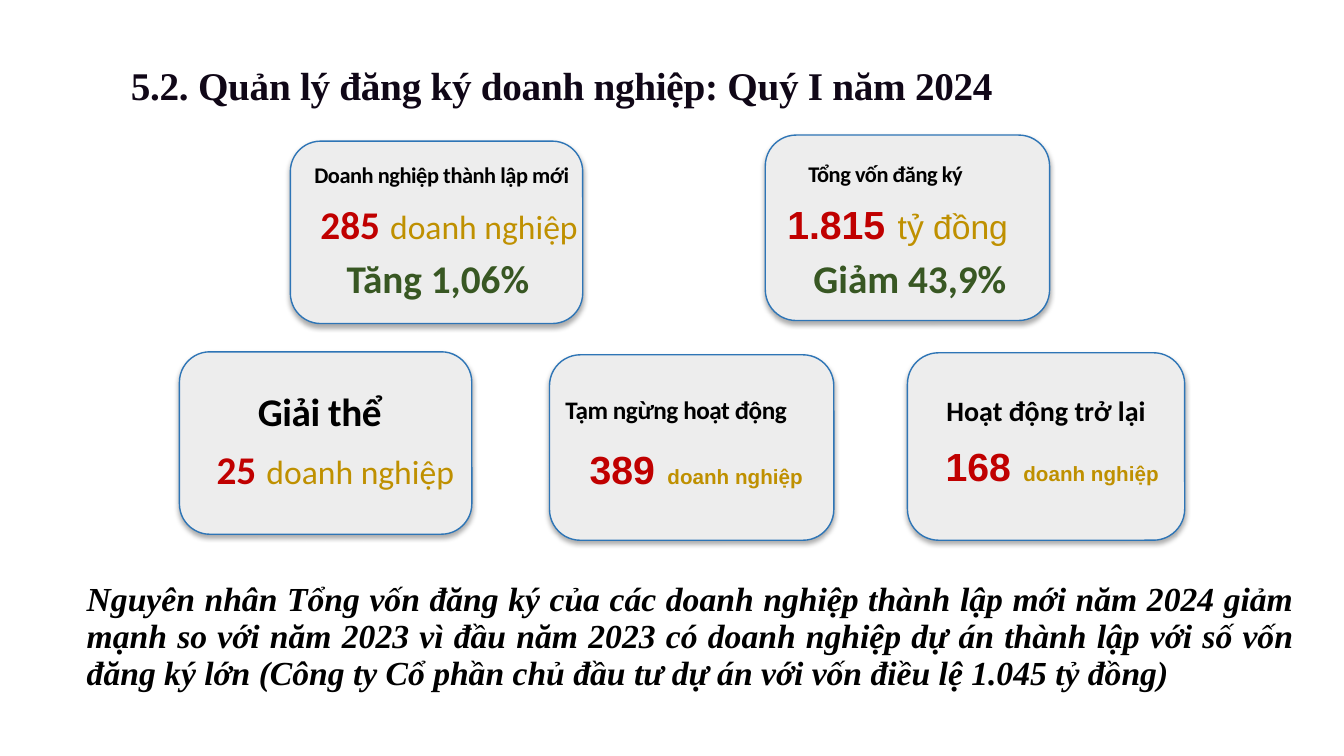
"""Build the business registration slide for the first quarter of 2024."""
from lxml.etree import SubElement
from pptx import Presentation
from pptx.dml.color import RGBColor
from pptx.enum.shapes import MSO_SHAPE
from pptx.enum.text import MSO_ANCHOR, PP_ALIGN
from pptx.oxml.ns import qn
from pptx.util import Inches, Pt

BLACK = RGBColor(0x00, 0x00, 0x00)
INK = RGBColor(0x10, 0x07, 0x17)
RED = RGBColor(0xC0, 0x00, 0x00)
GREEN = RGBColor(0x38, 0x57, 0x23)
GOLD = RGBColor(0xBF, 0x90, 0x00)
PALE = RGBColor(0xED, 0xED, 0xED)
BLUE = RGBColor(0x2E, 0x75, 0xB6)
SERIF = "Times New Roman"

TITLE = "5.2. Quản lý đăng ký doanh nghiệp: Quý I năm 2024"
REASON = (
    "Nguyên nhân Tổng vốn đăng ký của các doanh nghiệp thành lập mới năm 2024 "
    "giảm mạnh so với năm 2023 vì đầu năm 2023 có doanh nghiệp dự án thành lập "
    "với số vốn đăng ký lớn (Công ty Cổ phần chủ đầu tư dự án với vốn điều lệ "
    "1.045 tỷ đồng)"
)
CARDS = [
    {"box": (7.59, 1.34, 2.82, 1.84),
     "label": ("Tổng vốn đăng ký", (7.92, 1.54, 2.05, 0.64), {"size": 16, "spacing": -0.3}),
     "figure": ("1.815", "tỷ đồng", (7.71, 1.88, 2.42, 0.64), "Arial", 24, False),
     "change": ("Giảm 43,9%", (7.97, 2.47, 2.14, 0.57))},
    {"box": (2.88, 1.4, 2.9, 1.81),
     "label": ("Doanh nghiệp thành lập mới", (3.02, 1.55, 2.76, 0.64),
               {"size": 16, "spacing": -0.3}),
     "figure": ("285", "doanh nghiệp", (3.08, 1.88, 2.78, 0.64), "Calibri", 24, False),
     "change": ("Tăng 1,06%", (3.34, 2.47, 2.12, 0.57))},
    {"box": (5.45, 3.52, 2.82, 1.84),
     "label": ("Tạm ngừng hoạt động", (5.51, 3.86, 2.8, 0.67), {"size": 18, "spacing": -0.3}),
     "figure": ("389", "doanh nghiệp", (5.75, 4.31, 2.34, 0.64), "Arial", 14.7, True)},
    {"box": (9, 3.5, 2.75, 1.86),
     "label": ("Hoạt động trở lại", (9.28, 3.85, 2.19, 0.71),
               {"size": 20, "align": PP_ALIGN.CENTER}),
     "figure": ("168", "doanh nghiệp", (9.28, 4.28, 2.34, 0.64), "Arial", 14.7, True)},
    {"box": (1.78, 3.49, 2.9, 1.81),
     "label": ("Giải thể", (2.46, 3.79, 1.65, 0.84), {"size": 28, "spacing": -0.3}),
     "figure": ("25", "doanh nghiệp", (2.05, 4.31, 2.58, 0.64), "Calibri", 24, False)},
]


def inches(box):
    return [Inches(length) for length in box]


def write(paragraph, text, *, size, font="Calibri", color=BLACK, bold=True,
          italic=False, spacing=0, align=PP_ALIGN.LEFT):
    paragraph.alignment = align
    run = paragraph.add_run()
    run.text = text
    run.font.name = font
    run.font.size = Pt(size)
    run.font.bold = bold
    run.font.italic = italic
    run.font.color.rgb = color
    if spacing:
        run.font._element.set("spc", str(round(spacing * 100)))


def add_line(slide, box):
    frame = slide.shapes.add_textbox(*inches(box)).text_frame
    frame.word_wrap = True
    return frame.paragraphs[0]


def add_panel(slide, box):
    panel = slide.shapes.add_shape(MSO_SHAPE.ROUNDED_RECTANGLE, *inches(box))
    panel.fill.solid()
    panel.fill.fore_color.rgb = PALE
    panel.line.color.rgb = BLUE
    panel.line.width = Pt(1)
    panel.shadow.inherit = False
    effects = panel._element.spPr.find(qn("a:effectLst"))
    shadow = SubElement(effects, qn("a:outerShdw"), blurRad=str(Pt(3.5)),
                        dist=str(Pt(2.2)), dir="5400000", rotWithShape="0")
    tint = SubElement(shadow, qn("a:srgbClr"), val=str(BLACK))
    SubElement(tint, qn("a:alpha"), val="32000")


def add_card(slide, card):
    add_panel(slide, card["box"])
    label, label_box, label_format = card["label"]
    write(add_line(slide, label_box), label, **label_format)
    number, unit, figure_box, font, unit_size, unit_bold = card["figure"]
    figure = add_line(slide, figure_box)
    write(figure, number, size=28, font=font, color=RED)
    write(figure, " ", size=32, font=font, color=GREEN)
    write(figure, unit, size=unit_size, font=font, color=GOLD, bold=unit_bold)
    if "change" in card:
        change, change_box = card["change"]
        write(add_line(slide, change_box), change, size=28, color=GREEN)


def add_reason(slide):
    table = slide.shapes.add_table(1, 1, *inches((0.76, 5.67, 12.17, 1.3))).table
    table.first_row = False
    table.horz_banding = False
    cell = table.cell(0, 0)
    cell.fill.background()
    cell.vertical_anchor = MSO_ANCHOR.MIDDLE
    write(cell.text_frame.paragraphs[0], REASON, size=24, font=SERIF,
          italic=True, align=PP_ALIGN.JUSTIFY)


def main():
    deck = Presentation()
    deck.slide_width, deck.slide_height = Inches(13.33), Inches(7.5)
    slide = deck.slides.add_slide(deck.slide_layouts[6])
    for card in CARDS:
        add_card(slide, card)
    write(add_line(slide, (1.2, 0.56, 8.97, 0.57)), TITLE, size=28, font=SERIF,
          color=INK, spacing=-0.2)
    add_reason(slide)
    deck.save("out.pptx")


if __name__ == "__main__":
    main()
